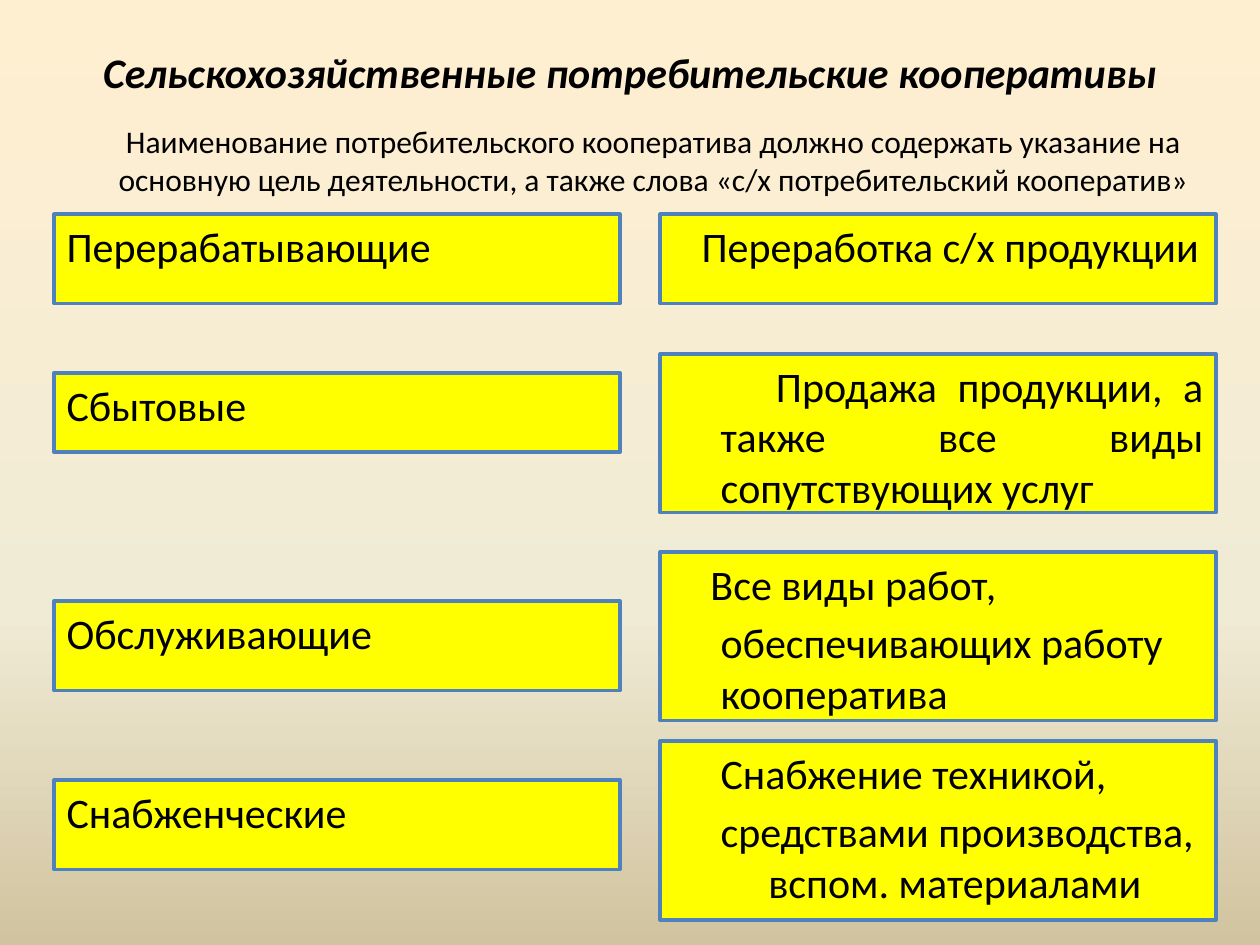
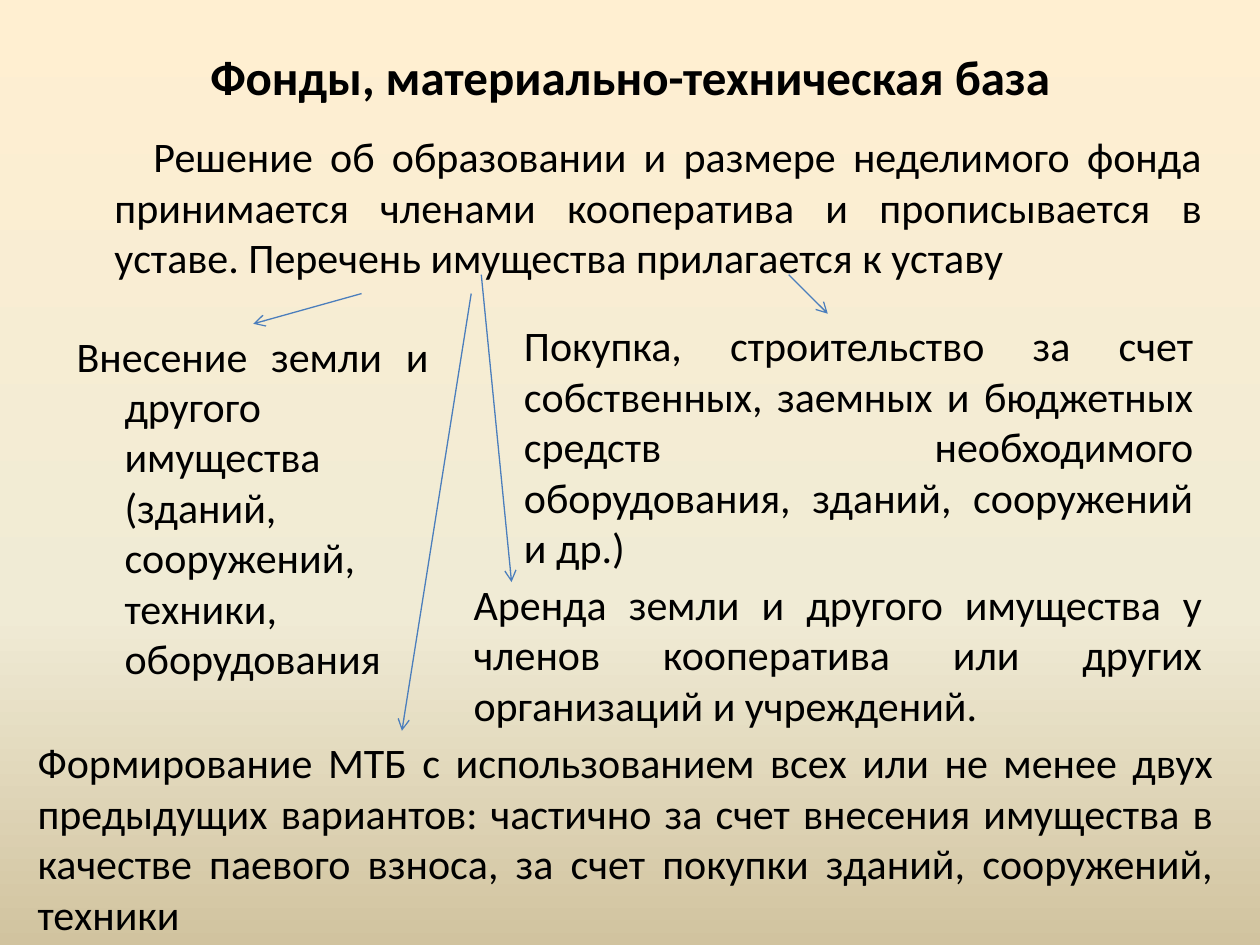
from copy import deepcopy

from pptx import Presentation
from pptx import util as u
from pptx.dml.color import RGBColor
from pptx.enum import shapes, text
from pptx.oxml.ns import qn
from lxml import etree

PX = 9144
FONT = "Calibri"
BLACK = RGBColor(0x00, 0x00, 0x00)
YELLOW = RGBColor(0xFF, 0xFF, 0x00)
BORDER = RGBColor(0x4F, 0x81, 0xBD)
ARROW = RGBColor(0x4B, 0x7E, 0xBC)
CREAM = RGBColor(0xFF, 0xEF, 0xD1)
IVORY = RGBColor(0xF0, 0xEB, 0xD5)
SAND = RGBColor(0xD1, 0xC3, 0x9F)
LEFT = text.PP_ALIGN.LEFT
MID = text.PP_ALIGN.CENTER
FULL = text.PP_ALIGN.JUSTIFY
HANG = 38


def emu(*sizes):
    return [size * PX for size in sizes]


def paint_back(master):
    fill = master.background.fill
    fill.gradient()
    fill.gradient_angle = 270
    stops = master.element.find(".//" + qn("a:gsLst"))
    stops.append(deepcopy(stops[-1]))
    for stop, color, place in zip(fill.gradient_stops, (CREAM, IVORY, SAND), (0, 0.65, 1)):
        stop.color.rgb = color
        stop.position = place


def style(para, size, align, bold=False, italic=False):
    para.alignment = align
    font = para.font
    font.name, font.size, font.color.rgb = FONT, u.Pt(size), BLACK
    font.bold, font.italic = bold, italic


def add_slide(deck, title, height, size, italic=False):
    slide = deck.slides.add_slide(deck.slide_layouts[5])
    head = slide.shapes.title
    head.left, head.top, head.width, head.height = emu(50, 30, 900, height)
    frame = head.text_frame
    frame.text = title
    frame.auto_size = text.MSO_AUTO_SIZE.NONE
    frame.vertical_anchor = text.MSO_ANCHOR.MIDDLE
    style(frame.paragraphs[0], size, MID, True, italic)
    return slide


def write(shape, lines, align=LEFT, size=24, rest=HANG, gap=0.2):
    frame = shape.text_frame
    frame.word_wrap = True
    frame.vertical_anchor = text.MSO_ANCHOR.TOP
    frame.text = "\n".join(line for line, first in lines)
    for para, (line, first) in zip(frame.paragraphs, lines):
        style(para, size, align)
        para.space_before = u.Pt(size * gap)
        props = para._p.get_or_add_pPr()
        props.set("marL", str(rest * PX))
        props.set("indent", str((first - rest) * PX))


def add_box(slide, place, lines, align=LEFT):
    box = slide.shapes.add_shape(shapes.MSO_SHAPE.RECTANGLE, *emu(*place))
    box.shadow.inherit = False
    box.fill.solid()
    box.fill.fore_color.rgb = YELLOW
    box.line.color.rgb = BORDER
    box.line.width = u.Pt(2)
    write(box, lines, align)
    return box


def add_text(slide, place, line, first=0, align=FULL, **look):
    write(slide.shapes.add_textbox(*emu(*place)), [(line, first)], align, **look)


def add_arrow(slide, *ends):
    arrow = slide.shapes.add_connector(shapes.MSO_CONNECTOR.STRAIGHT, *emu(*ends))
    arrow.line.color.rgb = ARROW
    arrow.line.width = u.Pt(0.75)
    etree.SubElement(arrow.line._get_or_add_ln(), qn("a:tailEnd"), type="arrow")
    etree.SubElement(arrow._element.spPr, qn("a:effectLst"))


def add_coops(deck):
    slide = add_slide(deck, "Сельскохозяйственные потребительские кооперативы", 54, 24, True)
    add_text(slide, (35, 92, 929, 71),
             "Наименование потребительского кооператива должно содержать указание на "
             "основную цель деятельности, а также слова «с/х потребительский кооператив»",
             HANG, MID, size=18)
    kinds = [
        ("Перерабатывающие", 170, 71),
        ("Сбытовые", 296, 63),
        ("Обслуживающие", 477, 71),
        ("Снабженческие", 619, 71),
    ]
    for kind, top, height in kinds:
        add_box(slide, (43, top, 449, height), [(kind, 0)])
    tasks = [
        (170, 71, LEFT, [("Переработка с/х продукции", 23)]),
        (281, 126, FULL, [("Продажа продукции, а также все виды сопутствующих услуг", 82)]),
        (438, 134, LEFT, [("Все виды работ,", 30),
                          ("обеспечивающих работу кооператива", HANG)]),
        (588, 142, FULL, [("Снабжение техникой,", HANG),
                          ("средствами производства,", HANG),
                          ("вспом. материалами", 76)]),
    ]
    for top, height, align, lines in tasks:
        box = add_box(slide, (524, top, 441, height), lines, align)
    box.text_frame.paragraphs[-1].space_before = u.Pt(0)


def add_funds(deck):
    slide = add_slide(deck, "Фонды, материально-техническая база", 61, 28)
    add_text(slide, (43, 99, 921, 134),
             "Решение об образовании и размере неделимого фонда принимается членами "
             "кооператива и прописывается в уставе. Перечень имущества прилагается к уставу", 69)
    add_text(slide, (51, 257, 299, 291),
             "Внесение земли и другого имущества (зданий, сооружений, техники, оборудования")
    notes = [
        ((406, 249, 551, 212),
         "Покупка, строительство за счет собственных, заемных и бюджетных средств "
         "необходимого оборудования, зданий, сооружений и др.)"),
        ((366, 454, 598, 131),
         "Аренда земли и другого имущества у членов кооператива или других "
         "организаций и учреждений."),
        ((20, 580, 953, 170),
         "Формирование МТБ с использованием всех или не менее двух предыдущих "
         "вариантов: частично за счет внесения имущества в качестве паевого взноса, "
         "за счет покупки зданий, сооружений, техники"),
    ]
    for place, note in notes:
        add_text(slide, place, note, rest=0, gap=0)
    for ends in [(287, 233, 201, 257), (626, 218, 657, 249),
                 (382, 218, 406, 462), (374, 233, 319, 580)]:
        add_arrow(slide, *ends)


def main():
    deck = Presentation()
    deck.slide_width, deck.slide_height = emu(1000, 750)
    paint_back(deck.slide_master)
    add_coops(deck)
    add_funds(deck)
    deck.save("out.pptx")


if __name__ == "__main__":
    main()
